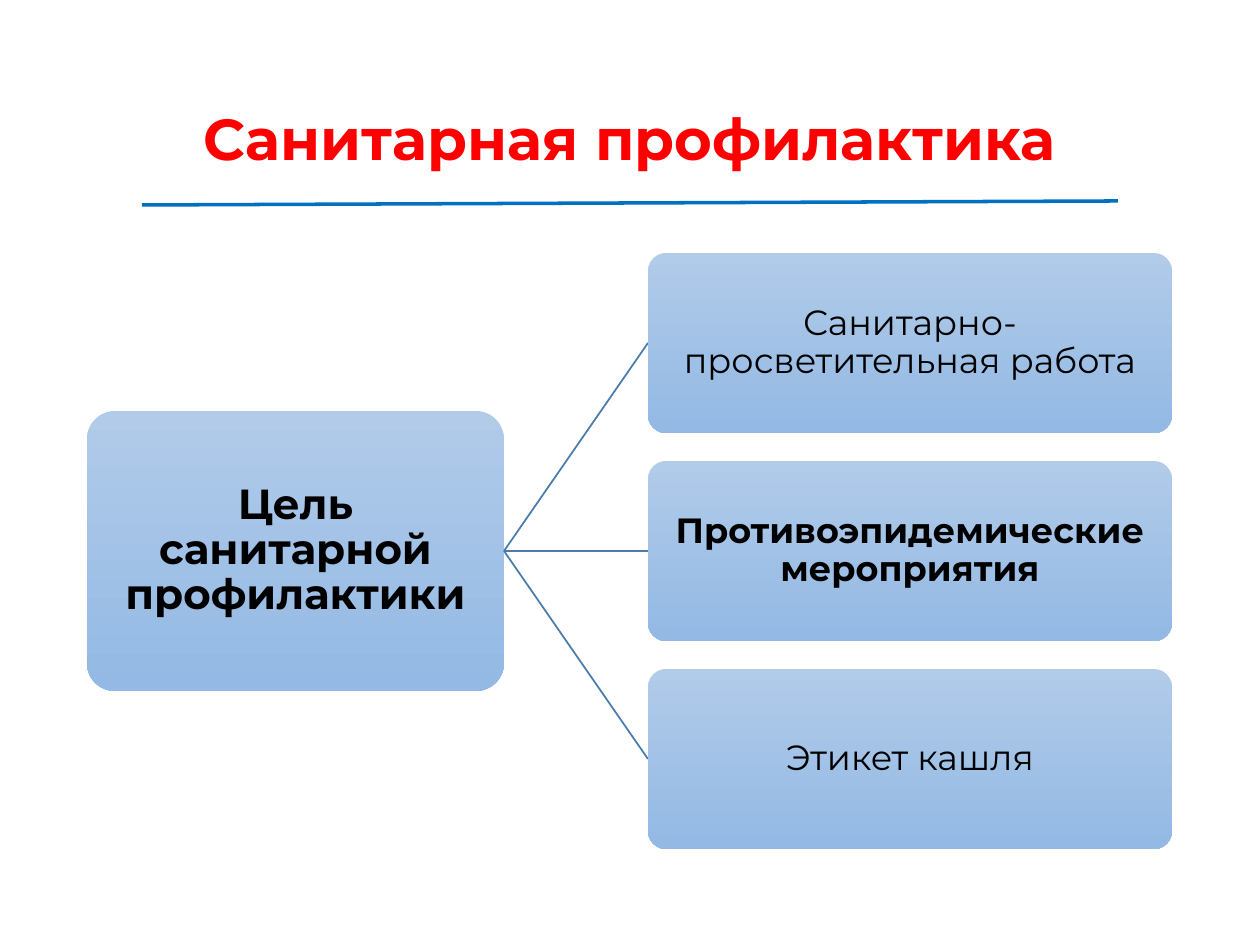
import pptx
import pptx.dml.color
import pptx.enum.shapes
import pptx.enum.text
import pptx.oxml.ns
import pptx.util
from dataclasses import dataclass
from lxml import etree

SCALE = 914400 / 126
FONT = "Montserrat"


@dataclass
class Label:
    text: str
    size: int
    bold: bool = False
    color: str = "000000"


@dataclass
class Box:
    x: int
    y: int
    w: int
    h: int
    inset: int
    label: Label


def px(n: float) -> pptx.util.Emu:
    return pptx.util.Emu(round(n * SCALE))


def rgb(value: str) -> pptx.dml.color.RGBColor:
    return pptx.dml.color.RGBColor.from_string(value)


def write(sp, label: Label, inset: int) -> None:
    tf = sp.text_frame
    tf.word_wrap = True
    tf.vertical_anchor = pptx.enum.text.MSO_ANCHOR.MIDDLE
    tf.margin_left = tf.margin_right = px(inset)
    tf.margin_top = tf.margin_bottom = px(inset)
    p = tf.paragraphs[0]
    p.alignment = pptx.enum.text.PP_ALIGN.CENTER
    p.line_spacing = 0.9
    r = p.add_run()
    r.text = label.text
    r.font.name = FONT
    r.font.size = pptx.util.Pt(label.size)
    r.font.bold = label.bold
    r.font.color.rgb = rgb(label.color)


def draw_box(s, box: Box) -> None:
    sp = s.shapes.add_shape(
        pptx.enum.shapes.MSO_SHAPE.ROUNDED_RECTANGLE,
        px(box.x), px(box.y), px(box.w), px(box.h))
    sp.shadow.inherit = False
    sp.adjustments[0] = 0.1
    sp.line.fill.background()
    sp.fill.gradient()
    sp.fill.gradient_angle = 270
    for stop, color in zip(sp.fill.gradient_stops, ("B1CBE9", "93B9E4")):
        stop.color.rgb = rgb(color)
    write(sp, box.label, box.inset)


def draw_line(s, x1: int, y1: int, x2: int, y2: int, color: str, width: int) -> None:
    line = s.shapes.add_connector(
        pptx.enum.shapes.MSO_CONNECTOR.STRAIGHT, px(x1), px(y1), px(x2), px(y2))
    line.line.color.rgb = rgb(color)
    line.line.width = pptx.util.Pt(width)
    etree.SubElement(line._element.spPr, pptx.oxml.ns.qn("a:effectLst"))


def main() -> None:
    prs = pptx.Presentation()
    prs.slide_width, prs.slide_height = px(1260), px(945)
    s = prs.slides.add_slide(prs.slide_layouts[6])

    title = s.shapes.add_textbox(px(87), px(50), px(1086), px(183))
    write(title, Label("Санитарная профилактика", 33, True, "FF0000"), 6)

    goal = Box(87, 411, 417, 280, 10, Label("Цель санитарной профилактики", 24, True))
    draw_box(s, goal)

    measures = [
        Label("Санитарно-просветительная работа", 20),
        Label("Противоэпидемические мероприятия", 20, True),
        Label("Этикет кашля", 20),
    ]
    for i, label in enumerate(measures):
        box = Box(648, 253 + i * 208, 524, 180, 6, label)
        draw_line(s, goal.x + goal.w, goal.y + goal.h // 2,
                  box.x, box.y + box.h // 2, "497CAB", 1)
        draw_box(s, box)

    draw_line(s, 142, 205, 1118, 201, "0070C0", 2)
    prs.save("out.pptx")


if __name__ == "__main__":
    main()
